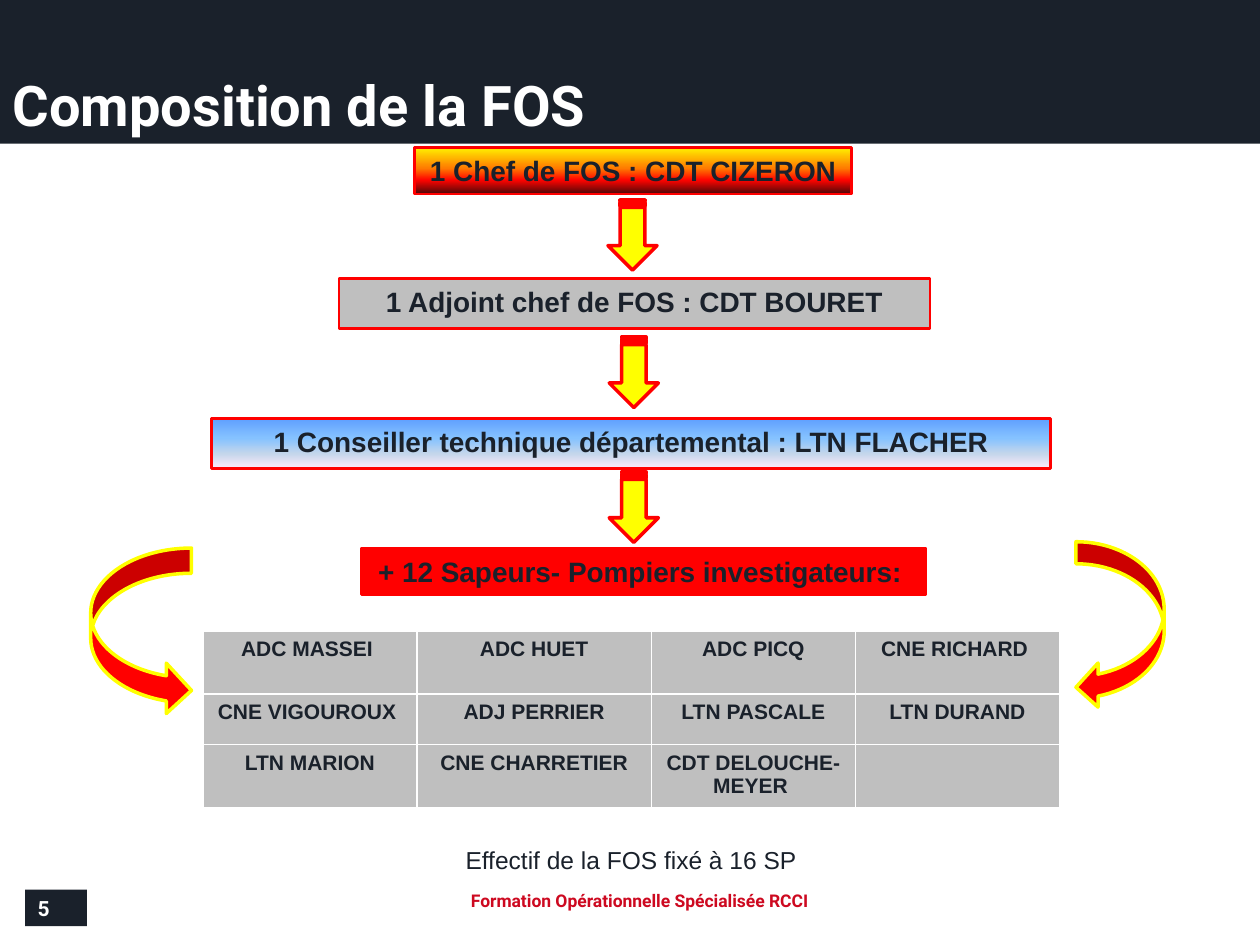
from typing import NamedTuple

from lxml import etree
from pptx import Presentation
from pptx.dml.color import RGBColor
from pptx.enum.shapes import MSO_SHAPE
from pptx.enum.text import MSO_ANCHOR, MSO_AUTO_SIZE, PP_ALIGN
from pptx.oxml.ns import qn
from pptx.util import Inches, Pt

RECTANGLE = MSO_SHAPE.RECTANGLE
STRIPED_ARROW = MSO_SHAPE.STRIPED_RIGHT_ARROW
CURVED_ARROW = MSO_SHAPE.CURVED_RIGHT_ARROW
LEFT, CENTER = PP_ALIGN.LEFT, PP_ALIGN.CENTER
TOP, MIDDLE, BOTTOM = MSO_ANCHOR.TOP, MSO_ANCHOR.MIDDLE, MSO_ANCHOR.BOTTOM
GROW = MSO_AUTO_SIZE.SHAPE_TO_FIT_TEXT

NAVY = RGBColor(0x1A, 0x21, 0x2B)
WHITE = RGBColor(0xFF, 0xFF, 0xFF)
GREY = RGBColor(0xBF, 0xBF, 0xBF)
RED = RGBColor(0xFF, 0x00, 0x00)
YELLOW = RGBColor(0xFF, 0xFF, 0x00)
FOOTER_RED = RGBColor(0xCD, 0x09, 0x20)
ORANGE = RGBColor(0xFF, 0x7A, 0x00)
LEMON = RGBColor(0xFF, 0xF2, 0x00)
SCARLET = RGBColor(0xFF, 0x03, 0x00)
MAROON = RGBColor(0x4D, 0x08, 0x08)
BLUE = RGBColor(0x5E, 0x9E, 0xFF)
SKY = RGBColor(0x85, 0xC2, 0xFF)
PALE_BLUE = RGBColor(0xC4, 0xD6, 0xEB)
PALE_PINK = RGBColor(0xFF, 0xEB, 0xFA)


class Stop(NamedTuple):
    percent: int
    color: RGBColor


class Role(NamedTuple):
    text: str
    left: float
    top: float
    width: float
    height: float
    stops: tuple[Stop, ...]


class Arrow(NamedTuple):
    kind: MSO_SHAPE
    left: float
    top: float
    width: float
    height: float
    fill: RGBColor
    line: RGBColor
    rotation: int = 0
    mirrored: bool = False


FIRE = (Stop(0, LEMON), Stop(45, ORANGE), Stop(70, SCARLET), Stop(100, MAROON))
DAWN = (Stop(0, BLUE), Stop(40, SKY), Stop(70, PALE_BLUE), Stop(100, PALE_PINK))

ROLES = [
    Role("1 Chef de FOS : CDT CIZERON", 3.29, 1.17, 3.47, 0.37, FIRE),
    Role("1 Adjoint chef de FOS : CDT BOURET", 2.69, 2.21, 4.69, 0.4, (Stop(0, GREY),)),
    Role("1 Conseiller technique départemental : LTN FLACHER", 1.68, 3.32, 6.66, 0.4, DAWN),
    Role("+ 12 Sapeurs- Pompiers investigateurs: ", 2.87, 4.35, 4.48, 0.37, (Stop(0, RED),)),
]
ARROWS = [
    *(Arrow(STRIPED_ARROW, left, top, 0.56, 0.39, YELLOW, RED, rotation=90)
      for left, top in ((4.74, 1.67), (4.75, 2.76), (4.75, 3.83))),
    Arrow(CURVED_ARROW, 0.72, 4.35, 0.8, 1.33, RED, YELLOW),
    Arrow(CURVED_ARROW, 8.54, 4.3, 0.7, 1.33, RED, YELLOW, mirrored=True),
]
INVESTIGATORS = [
    ["ADC MASSEI ", "ADC HUET", "ADC PICQ", "CNE RICHARD "],
    ["CNE VIGOUROUX ", "ADJ PERRIER", "LTN PASCALE", "LTN DURAND"],
    ["LTN MARION", "CNE CHARRETIER", "CDT DELOUCHE- MEYER ", ""],
]
COLUMN_WIDTHS = [1.7, 1.86, 1.62, 1.62]
ROW_HEIGHTS = [0.5, 0.4, 0.5]


def write(frame, text: str, size: int, color: RGBColor, font: str = "Arial",
          bold: bool = True, align: PP_ALIGN = CENTER):
    para = frame.paragraphs[0]
    para.alignment = align
    span = para.add_run()
    span.text = text
    span.font.name = font
    span.font.size = Pt(size)
    span.font.bold = bold
    span.font.color.rgb = color
    return para


def add_box(slide, kind: MSO_SHAPE, left: float, top: float, width: float, height: float,
            fill: RGBColor, line: RGBColor | None = None, weight: float = 1.5):
    box = slide.shapes.add_shape(kind, Inches(left), Inches(top), Inches(width), Inches(height))
    box.shadow.inherit = False
    box.fill.solid()
    box.fill.fore_color.rgb = fill
    if line is None:
        box.line.fill.background()
    else:
        box.line.color.rgb = line
        box.line.width = Pt(weight)
    return box


def set_gradient(box, stops: tuple[Stop, ...]) -> None:
    """Fill the box from top to bottom with the given stops."""
    box.fill.gradient()
    box.fill.gradient_angle = 270
    stop_list = box.element.spPr.find(".//" + qn("a:gsLst"))
    for old in list(stop_list):
        stop_list.remove(old)
    for stop in stops:
        node = etree.SubElement(stop_list, qn("a:gs"), pos=str(stop.percent * 1000))
        etree.SubElement(node, qn("a:srgbClr"), val=str(stop.color))


def add_role(slide, role: Role) -> None:
    box = add_box(slide, RECTANGLE, role.left, role.top, role.width, role.height,
                  role.stops[0].color, RED)
    if len(role.stops) > 1:
        set_gradient(box, role.stops)
    frame = box.text_frame
    frame.word_wrap = False
    frame.auto_size = GROW
    frame.vertical_anchor = TOP
    write(frame, role.text, 16, NAVY)


def add_arrow(slide, arrow: Arrow) -> None:
    shape = add_box(slide, arrow.kind, arrow.left, arrow.top, arrow.width, arrow.height,
                    arrow.fill, arrow.line, 2)
    shape.rotation = arrow.rotation
    if arrow.mirrored:
        shape.element.spPr.get_or_add_xfrm().set("flipH", "1")


def set_borders(cell, color: RGBColor, weight: float) -> None:
    properties = cell._tc.get_or_add_tcPr()
    for index, side in enumerate(("a:lnL", "a:lnR", "a:lnT", "a:lnB")):
        border = etree.Element(qn(side), w=str(Pt(weight)))
        fill = etree.SubElement(border, qn("a:solidFill"))
        etree.SubElement(fill, qn("a:srgbClr"), val=str(color))
        properties.insert(index, border)


def add_investigators(slide) -> None:
    table = slide.shapes.add_table(
        len(ROW_HEIGHTS), len(COLUMN_WIDTHS), Inches(1.61), Inches(5.01),
        Inches(sum(COLUMN_WIDTHS)), Inches(sum(ROW_HEIGHTS))).table
    table.first_row = table.horz_banding = False
    for column, width in zip(table.columns, COLUMN_WIDTHS):
        column.width = Inches(width)
    for row, height, names in zip(table.rows, ROW_HEIGHTS, INVESTIGATORS):
        row.height = Inches(height)
        for cell, name in zip(row.cells, names):
            cell.fill.solid()
            cell.fill.fore_color.rgb = GREY
            set_borders(cell, WHITE, 1)
            if name:
                write(cell.text_frame, name, 12, NAVY)


def add_title(slide, text: str) -> None:
    title = slide.shapes.title
    title.left = title.top = 0
    title.width, title.height = Inches(10), Inches(1.14)
    title.fill.solid()
    title.fill.fore_color.rgb = NAVY
    title.text_frame.vertical_anchor = BOTTOM
    write(title.text_frame, text, 32, WHITE, "Roboto", align=LEFT)


def add_text(slide, left: float, top: float, width: float, height: float):
    box = slide.shapes.add_textbox(Inches(left), Inches(top), Inches(width), Inches(height))
    return box.text_frame


def main() -> None:
    deck = Presentation()
    deck.slide_width, deck.slide_height = Inches(10), Inches(7.5)
    page = deck.slides.add_slide(deck.slide_layouts[5])
    add_title(page, "Composition de la FOS")

    footer = add_text(page, 2.95, 7.06, 4.25, 0.24)
    footer.word_wrap = True
    footer.margin_top = footer.margin_bottom = Inches(0.04)
    para = write(footer, "Formation Opérationnelle Spécialisée RCCI", 10, FOOTER_RED, "Roboto")
    para.line_spacing = 0.8

    number = add_box(page, RECTANGLE, 0.2, 7.06, 0.49, 0.29, NAVY).text_frame
    number.vertical_anchor = MIDDLE
    write(number, "5", 12, WHITE, "Roboto", align=LEFT)

    for role in ROLES:
        add_role(page, role)
    for arrow in ARROWS:
        add_arrow(page, arrow)

    headcount = add_text(page, 3.56, 6.66, 2.9, 0.34)
    headcount.word_wrap = False
    headcount.auto_size = GROW
    write(headcount, "Effectif de la FOS fixé à 16 SP", 14, NAVY, bold=False)
    add_investigators(page)
    deck.save("out.pptx")


if __name__ == "__main__":
    main()
